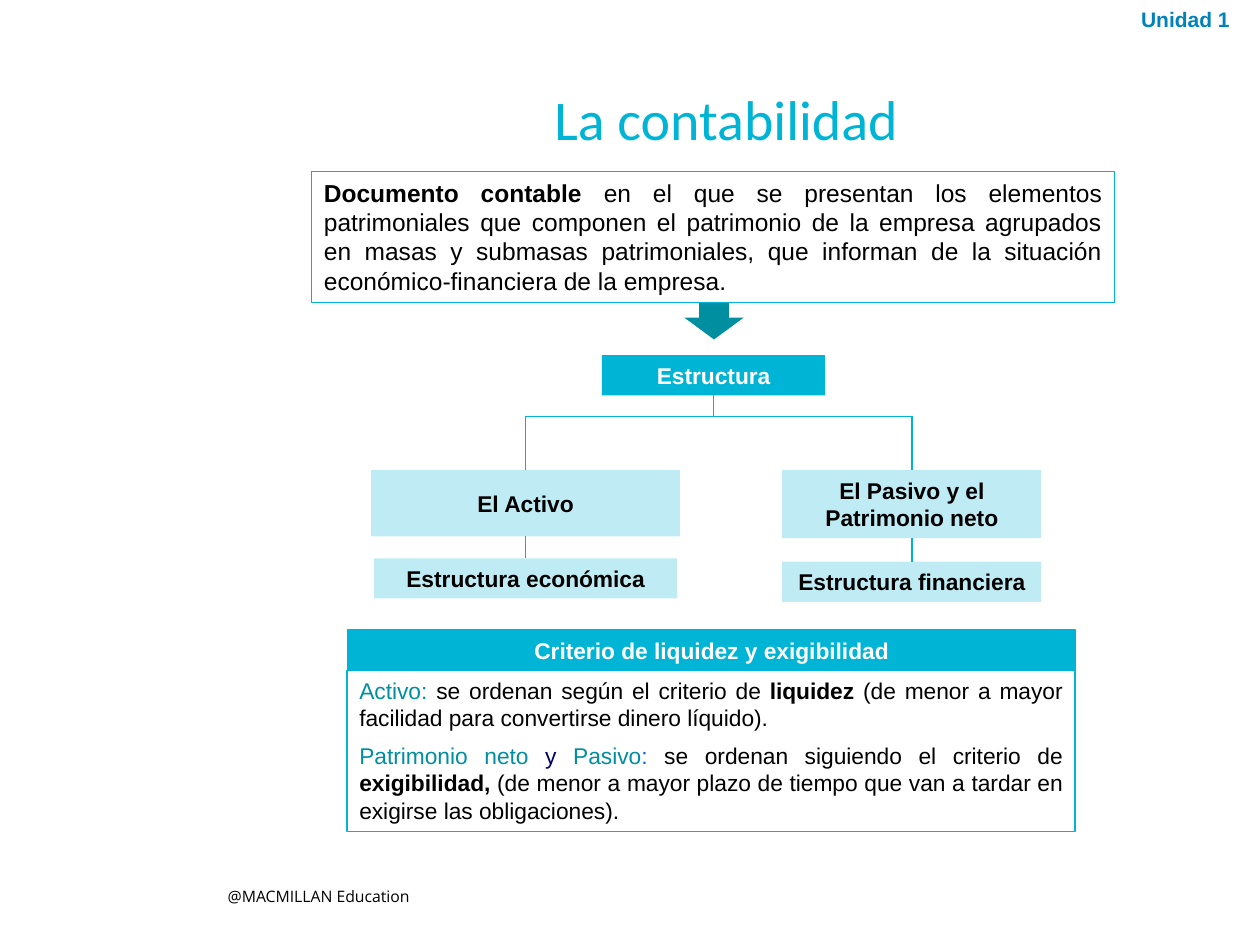
from dataclasses import dataclass

from lxml.etree import SubElement
from pptx import Presentation
from pptx.dml.color import RGBColor
from pptx.enum.shapes import MSO_CONNECTOR as LINE, MSO_SHAPE as SHAPE
from pptx.enum.text import MSO_ANCHOR as ANCHOR, PP_ALIGN as ALIGN
from pptx.oxml.ns import qn
from pptx.util import Pt

TOP, BOTTOM = 0, 2


@dataclass(frozen=True)
class Theme:
    cyan: str = "00B4D5"
    teal: str = "008FA0"
    blue: str = "0083BB"
    navy: str = "000064"
    bright: str = "0064FF"
    black: str = "000000"
    white: str = "FFFFFF"
    font: str = "Arial"
    title_font: str = "Calibri"
    footer_font: str = "Open Sans"
    title: int = 32
    lead: int = 14
    body: int = 13
    unit: int = 12
    footer: int = 9


class Deck:
    def __init__(self, prs, theme):
        self.theme = theme
        self.s = prs.slides.add_slide(prs.slide_layouts[6])

    def add_runs(self, p, runs, size, align, font=None):
        """Fill a paragraph from (text, colour, bold) runs."""
        p.alignment = align
        for text, color, bold in runs:
            r = p.add_run()
            r.text = text
            r.font.name = font or self.theme.font
            r.font.size = Pt(size)
            r.font.bold = bold
            r.font.color.rgb = RGBColor.from_string(color)

    def text(self, box, text, size, color, font=None, bold=False, align=ALIGN.LEFT):
        sp = self.s.shapes.add_textbox(*map(Pt, box))
        sp.text_frame.word_wrap = True
        p = sp.text_frame.paragraphs[0]
        self.add_runs(p, [(text, color, bold)], size, align, font)
        return p

    def shape(self, box, fill=None, line=None, kind=SHAPE.RECTANGLE, alpha=None):
        sp = self.s.shapes.add_shape(kind, *map(Pt, box))
        sp.shadow.inherit = False
        if fill:
            sp.fill.solid()
            sp.fill.fore_color.rgb = RGBColor.from_string(fill)
        else:
            sp.fill.background()
        if alpha:
            clr = sp._element.spPr.find(qn("a:solidFill")).find(qn("a:srgbClr"))
            SubElement(clr, qn("a:alpha")).set("val", str(alpha * 1000))
        if line:
            sp.line.color.rgb = RGBColor.from_string(line)
            sp.line.width = Pt(0.75)
        else:
            sp.line.fill.background()
        return sp

    def panel(self, box, paragraphs, size, fill=None):
        """Outlined box of justified text."""
        sp = self.shape(box, fill, self.theme.cyan)
        tf = sp.text_frame
        tf.vertical_anchor = ANCHOR.TOP
        for i, runs in enumerate(paragraphs):
            p = tf.add_paragraph() if i else tf.paragraphs[0]
            self.add_runs(p, runs, size, ALIGN.JUSTIFY)
            if i < len(paragraphs) - 1:
                p.space_after = Pt(6)

    def heading(self, box, text, line=None):
        """Solid box with white text."""
        sp = self.shape(box, self.theme.cyan, line)
        self.label(sp, text, self.theme.white)
        return sp

    def node(self, box, text):
        """Pale box with black text."""
        sp = self.shape(box, self.theme.cyan, alpha=25)
        self.label(sp, text, self.theme.black)
        return sp

    def label(self, sp, text, color):
        sp.text_frame.vertical_anchor = ANCHOR.MIDDLE
        self.add_runs(sp.text_frame.paragraphs[0], [(text, color, True)],
                      self.theme.body, ALIGN.CENTER)

    def line(self, start, end, begin=None, finish=None):
        """Straight line; begin and finish are (shape, site) joints."""
        c = self.s.shapes.add_connector(LINE.STRAIGHT, *map(Pt, (*start, *end)))
        c.line.color.rgb = RGBColor.from_string(self.theme.cyan)
        c.line.width = Pt(1)
        SubElement(c._element.spPr, qn("a:effectLst"))
        if begin:
            c.begin_connect(*begin)
        if finish:
            c.end_connect(*finish)


def main():
    prs = Presentation()
    prs.slide_width, prs.slide_height = Pt(720), Pt(540)
    t = Theme()
    d = Deck(prs, t)

    d.text((123, 503, 138, 18), "@MACMILLAN Education", t.footer, t.black, t.footer_font)
    d.text((645, 0, 75, 21.6), "Unidad 1", t.unit, t.blue, bold=True)
    title = d.text((110, 49, 610, 39), "La contabilidad", t.title, t.cyan,
                   t.title_font, align=ALIGN.CENTER)
    title.line_spacing = 0.9

    d.shape((391, 169, 34, 25), t.teal, kind=SHAPE.DOWN_ARROW)
    d.panel((178, 98, 459, 75), [[
        ("Documento contable ", t.black, True),
        ("en el que se presentan los elementos patrimoniales que componen el "
         "patrimonio de la empresa agrupados en masas y submasas patrimoniales, que "
         "informan de la situación económico-financiera de la empresa.", t.black, False),
    ]], t.lead, t.white)

    root = d.heading((344, 203, 127.5, 23), "Estructura")
    assets = d.node((212, 268.5, 176.5, 38), "El Activo")
    economic = d.node((213.75, 319, 173, 23), "Estructura económica")
    liabilities = d.node((447, 268.5, 148, 39), "El Pasivo y el Patrimonio neto")
    financial = d.node((447, 321, 148, 23), "Estructura financiera")

    root_x, left_x, right_x, bus_y = 407.75, 300.25, 521, 238
    d.line((root_x, 226), (root_x, bus_y), begin=(root, BOTTOM))
    d.line((left_x, bus_y), (right_x, bus_y))
    for x, parent, child in ((left_x, assets, economic), (right_x, liabilities, financial)):
        d.line((x, bus_y), (x, 268.5), finish=(parent, TOP))
        d.line((x, 307), (x, 320), (parent, BOTTOM), (child, TOP))

    d.panel((198.25, 383, 416, 92), [
        [("Activo: ", t.teal, False),
         ("se ordenan según el criterio de ", t.black, False),
         ("liquidez", t.black, True),
         (" (de menor a mayor facilidad para convertirse dinero líquido). ", t.black, False)],
        [("Patrimonio neto ", t.teal, False),
         ("y ", t.navy, False),
         ("Pasivo", t.teal, False),
         (": ", t.bright, False),
         ("se ordenan siguiendo el criterio de ", t.black, False),
         ("exigibilidad, ", t.black, True),
         ("(de menor a mayor plazo de tiempo que van a tardar en exigirse las "
          "obligaciones).", t.black, False)],
    ], t.body)
    d.heading((198.5, 360, 416, 23), "Criterio de liquidez y exigibilidad", t.cyan)

    prs.save("out.pptx")


if __name__ == "__main__":
    main()
